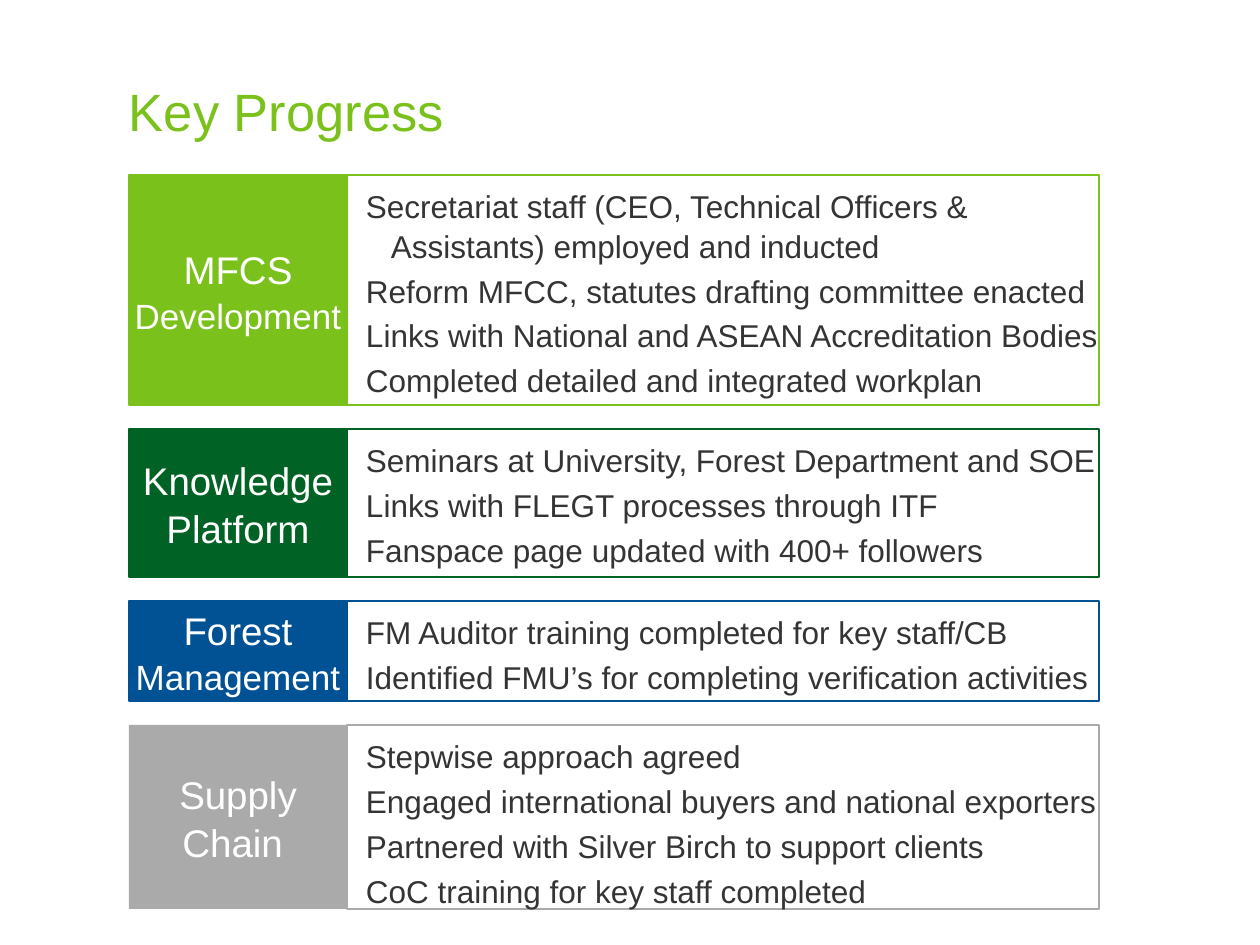
from dataclasses import dataclass

from pptx import Presentation
from pptx.dml.color import RGBColor
from pptx.enum.shapes import MSO_SHAPE
from pptx.enum.text import MSO_ANCHOR, PP_ALIGN
from pptx.util import Emu, Pt

RECT = MSO_SHAPE.RECTANGLE
TOP, MIDDLE, BOTTOM = MSO_ANCHOR.TOP, MSO_ANCHOR.MIDDLE, MSO_ANCHOR.BOTTOM
LEFT, CENTER = PP_ALIGN.LEFT, PP_ALIGN.CENTER
SCALE = 914400 / 126  # EMU per px


@dataclass(frozen=True)
class Theme:
    font: str = "Arial"
    lime: str = "7BC11B"
    green: str = "006225"
    blue: str = "005295"
    gray: str = "AAAAAA"
    white: str = "FFFFFF"
    ink: str = "343434"
    title: int = 30
    large: int = 22
    small: int = 20
    body: int = 18
    line: float = 0.75
    lead: float = 1.05
    gap: int = 3


@dataclass(frozen=True)
class Run:
    text: str
    size: int


@dataclass(frozen=True)
class Row:
    color: str
    high: int
    label: list[list[Run]]  # paragraphs of runs
    items: list[str]


THEME = Theme()

# Page grid in px
EDGE, START, GAP = 129, 175, 24
SIDE, MAIN = 218, 752

ROWS = [
    Row(THEME.lime, 230,
        [[Run("MFCS", THEME.large)], [Run("Development", THEME.small)]],
        ["Secretariat staff (CEO, Technical Officers & Assistants) employed and inducted",
         "Reform MFCC, statutes drafting committee enacted",
         "Links with National and ASEAN Accreditation Bodies",
         "Completed detailed and integrated workplan"]),
    Row(THEME.green, 148,
        [[Run("Knowledge Platform", THEME.large)]],
        ["Seminars at University, Forest Department and SOE",
         "Links with FLEGT processes through ITF",
         "Fanspace page updated with 400+ followers"]),
    Row(THEME.blue, 100,
        [[Run("Forest ", THEME.large), Run("Management", THEME.small)]],
        ["FM Auditor training completed for key staff/CB",
         "Identified FMU’s for completing verification activities"]),
    Row(THEME.gray, 184,
        [[Run("Supply Chain ", THEME.large)]],
        ["Stepwise approach agreed",
         "Engaged international buyers and national exporters",
         "Partnered with Silver Birch to support clients",
         "CoC training for key staff completed"]),
]


def px(size: int) -> Emu:
    return Emu(round(size * SCALE))


def tint(name: str) -> RGBColor:
    return RGBColor.from_string(name)


def write(shape, paras: list[list[Run]], color: str, anchor, align,
          inset: int = 0, hang: bool = False) -> None:
    frame = shape.text_frame
    frame.word_wrap = True
    frame.vertical_anchor = anchor
    frame.margin_left = frame.margin_right = frame.margin_bottom = 0
    frame.margin_top = px(inset)
    for i, runs in enumerate(paras):
        para = frame.add_paragraph() if i else frame.paragraphs[0]
        para.alignment = align
        para.line_spacing = THEME.lead
        if hang:
            para.space_before = Pt(THEME.gap if i else 0)
            props = para._p.get_or_add_pPr()
            props.set("marL", str(px(44)))
            props.set("indent", str(px(-25)))
        for part in runs:
            run = para.add_run()
            run.text = part.text
            run.font.name = THEME.font
            run.font.size = Pt(part.size)
            run.font.color.rgb = tint(color)


def box(slide, left: int, top: int, wide: int, high: int, color: str, solid: bool):
    shape = slide.shapes.add_shape(RECT, px(left), px(top), px(wide), px(high))
    shape.shadow.inherit = False
    if solid:
        shape.fill.solid()
        shape.fill.fore_color.rgb = tint(color)
    else:
        shape.fill.background()
    shape.line.color.rgb = tint(color)
    shape.line.width = Pt(THEME.line)
    return shape


def draw(slide, row: Row, top: int) -> None:
    label = box(slide, EDGE, top, SIDE, row.high, row.color, True)
    if row.color == THEME.gray:
        label.line.fill.background()
    write(label, row.label, THEME.white, MIDDLE, CENTER)
    panel = box(slide, EDGE + SIDE, top, MAIN, row.high, row.color, False)
    items = [[Run(text, THEME.body)] for text in row.items]
    write(panel, items, THEME.ink, TOP, LEFT, inset=10, hang=True)


def main() -> None:
    deck = Presentation()
    deck.slide_width, deck.slide_height = px(1260), px(945)
    slide = deck.slides.add_slide(deck.slide_layouts[6])

    # Title
    title = slide.shapes.add_textbox(px(EDGE), 0, px(1087), px(142))
    write(title, [[Run("Key Progress", THEME.title)]], THEME.lime, BOTTOM, LEFT)

    # Progress rows, stacked with equal gaps
    top = START
    for row in ROWS:
        draw(slide, row, top)
        top += row.high + GAP

    deck.save("out.pptx")


if __name__ == "__main__":
    main()
